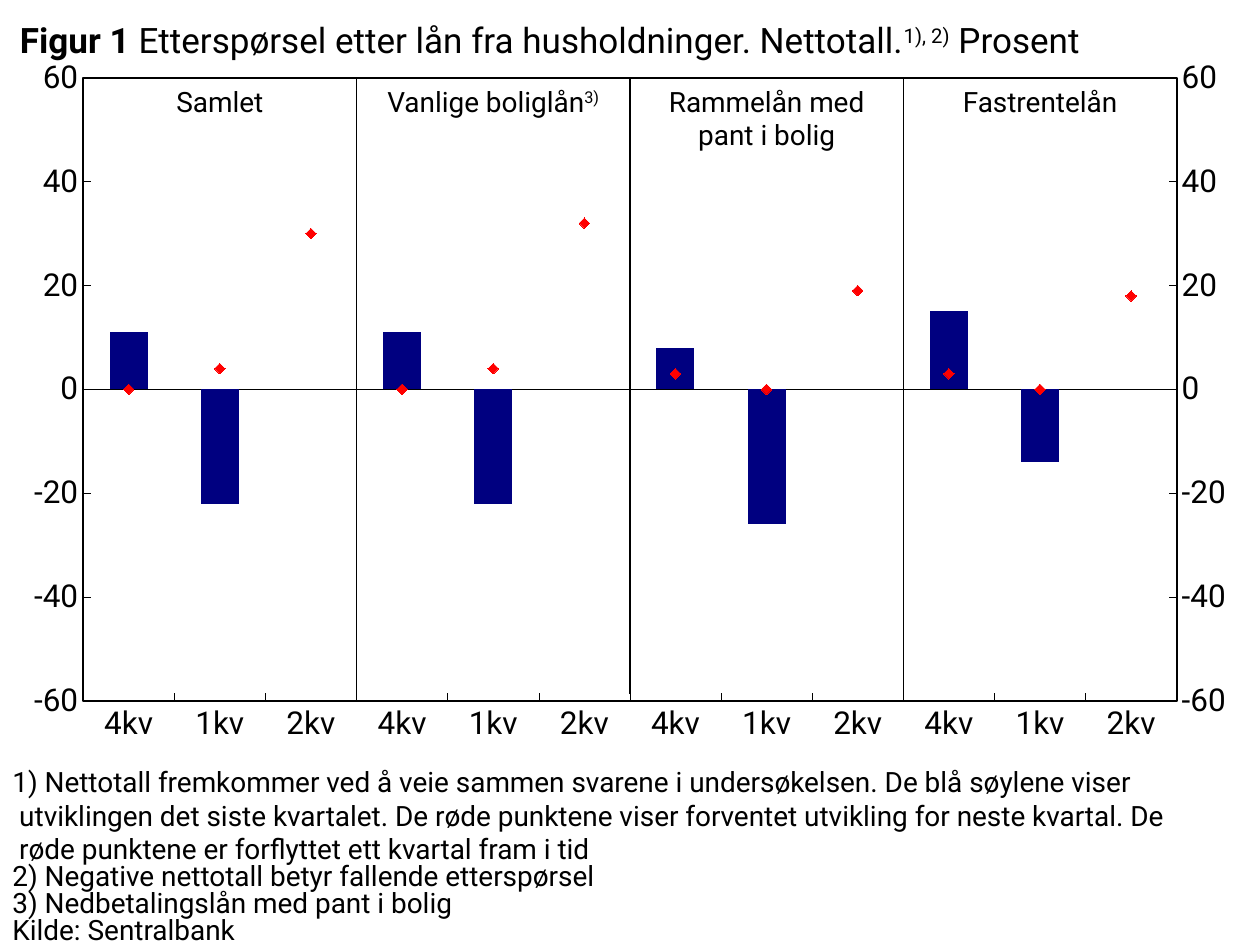
"""Build a slide on household loan demand: four-panel chart with footnotes."""
from copy import deepcopy
from itertools import product

from lxml import etree
from pptx import Presentation
from pptx.chart.data import CategoryChartData
from pptx.dml.color import RGBColor
from pptx.enum import chart as charts, shapes, text
from pptx.oxml import parse_xml
from pptx.oxml.ns import nsdecls, qn
from pptx.util import Inches, Pt

THEME = {
    "font": "Roboto",
    "ink": RGBColor(0x00, 0x00, 0x00),
    "bar": RGBColor(0x00, 0x00, 0x80),
    "point": RGBColor(0xFF, 0x00, 0x00),
    "title": Pt(20),
    "axis": Pt(18),
    "body": Pt(16),
}
PANELS = [
    ([("Samlet", {})], (11, -22, None), (0, 4, 30)),
    ([("Vanlige boliglån", {}), ("3)", {"baseline": "30000"})], (11, -22, None), (0, 4, 32)),
    ([("Rammelån med pant i bolig", {})], (8, -26, None), (3, 0, 19)),
    ([("Fastrentelån", {})], (15, -14, None), (3, 0, 18)),
]
TITLE = [
    ("Figur 1", {"b": "1"}),
    (" Etterspørsel etter lån fra husholdninger. Nettotall.", {}),
    ("1), 2)", {"baseline": "30000"}),
    (" Prosent", {}),
]
NOTES = [
    ("1) Nettotall fremkommer ved å veie sammen svarene i undersøkelsen. De blå søylene viser", 1),
    (" utviklingen det siste kvartalet. De røde punktene viser forventet utvikling for neste kvartal. De", 1),
    (" røde punktene er forflyttet ett kvartal fram i tid", 1),
    ("2) Negative nettotall betyr fallende etterspørsel", 0.8),
    ("3) Nedbetalingslån med pant i bolig", 0.8),
    ("Kilde: Sentralbank", 0.8),
]
QUARTERS = ["4kv", "1kv", "2kv"]

presentation = Presentation()
presentation.slide_width, presentation.slide_height = Inches(10), Inches(7.5)
slide = presentation.slides.add_slide(presentation.slide_layouts[6])

CHART_TOP, CHART_HEIGHT = 0.47, 5.71
PLOT = {"x": 0.066, "y": 0.026, "w": 0.868, "h": 0.866}
plot_left = PLOT["x"] * 10
plot_top = CHART_TOP + PLOT["y"] * CHART_HEIGHT
column = PLOT["w"] * 10 / len(PANELS)


def add_text(box, paragraphs, size, align=text.PP_ALIGN.LEFT, anchor=text.MSO_ANCHOR.TOP):
    """Add a wrapped text box and return its paragraphs."""
    frame = slide.shapes.add_textbox(*map(Inches, box)).text_frame
    frame.word_wrap, frame.vertical_anchor = True, anchor
    for index, runs in enumerate(paragraphs):
        paragraph = frame.add_paragraph() if index else frame.paragraphs[0]
        paragraph.alignment = align
        for words, attributes in runs:
            run = paragraph.add_run()
            run.text = words
            run.font.name, run.font.size = THEME["font"], size
            run.font.color.rgb = THEME["ink"]
            for name, value in attributes.items():
                run.font._element.set(name, value)
    return frame.paragraphs


data = CategoryChartData()
data.categories = QUARTERS * len(PANELS)
for group, (index, panel) in product((1, 2), enumerate(PANELS)):
    values = [None] * (len(QUARTERS) * len(PANELS))
    start = index * len(QUARTERS)
    values[start:start + len(QUARTERS)] = panel[group]
    data.add_series(f"Series {(group - 1) * len(PANELS) + index + 1}", values)
chart = slide.shapes.add_chart(
    charts.XL_CHART_TYPE.COLUMN_CLUSTERED, 0, Inches(CHART_TOP),
    presentation.slide_width, Inches(CHART_HEIGHT), data).chart
chart.has_legend = chart.has_title = False
chart.font.name, chart.font.size = THEME["font"], THEME["axis"]
chart.font.color.rgb = THEME["ink"]

axis_formats = {
    chart.category_axis: {
        "major_tick_mark": charts.XL_TICK_MARK.NONE,
        "tick_label_position": charts.XL_TICK_LABEL_POSITION.NONE},
    chart.value_axis: {
        "major_tick_mark": charts.XL_TICK_MARK.INSIDE,
        "tick_label_position": charts.XL_TICK_LABEL_POSITION.NEXT_TO_AXIS,
        "minimum_scale": -60, "maximum_scale": 60, "major_unit": 20},
}
for axis, settings in axis_formats.items():
    settings |= {"has_major_gridlines": False, "minor_tick_mark": charts.XL_TICK_MARK.NONE}
    for name, value in settings.items():
        setattr(axis, name, value)
    axis.format.line.color.rgb = THEME["ink"]
    axis.format.line.width = Pt(0.25)
    axis.tick_labels.font.name = THEME["font"]
    axis.tick_labels.font.size = THEME["axis"]
    axis.tick_labels.font.color.rgb = THEME["ink"]

plot_area = chart._chartSpace.find(".//" + qn("c:plotArea"))
bar_group = plot_area.find(qn("c:barChart"))
line_group = parse_xml(
    f'<c:lineChart {nsdecls("c")}><c:grouping val="standard"/><c:varyColors val="0"/>'
    '<c:marker val="1"/><c:axId val="5001"/><c:axId val="5002"/></c:lineChart>')
bar_group.addnext(line_group)
for series in bar_group.findall(qn("c:ser"))[len(PANELS):]:
    for flag in series.findall(qn("c:invertIfNegative")):
        series.remove(flag)
    line_group.find(qn("c:marker")).addprevious(series)

last_axis = plot_area.find(qn("c:valAx"))
right_axes = [
    ("c:valAx", {"axId": "5002", "crossAx": "5001", "crosses": "max", "axPos": "r"}),
    ("c:catAx", {"axId": "5001", "crossAx": "5002", "crosses": "min", "axPos": "b",
                 "majorTickMark": "in", "tickLblPos": "nextTo"}),
]
for tag, settings in right_axes:
    axis = deepcopy(plot_area.find(qn(tag)))
    for name, value in settings.items():
        axis.find(qn("c:" + name)).set("val", value)
    last_axis.addnext(axis)

for layout in plot_area.findall(qn("c:layout")):
    plot_area.remove(layout)
layout = etree.Element(qn("c:layout"))
manual = etree.SubElement(layout, qn("c:manualLayout"))
modes = {"layoutTarget": "inner", "xMode": "edge", "yMode": "edge"}
for name, value in (modes | PLOT).items():
    etree.SubElement(manual, qn("c:" + name)).set("val", str(value))
plot_area.insert(0, layout)
plot_area.append(parse_xml(
    f'<c:spPr {nsdecls("c", "a")}><a:noFill/><a:ln w="12700"><a:solidFill>'
    f'<a:srgbClr val="{THEME["ink"]}"/></a:solidFill></a:ln></c:spPr>'))

bars, points = chart.plots
bars.gap_width, bars.overlap, bars.vary_by_categories = 140, 100, False
for series in bars.series:
    series.invert_if_negative = False
    series.format.fill.solid()
    series.format.fill.fore_color.rgb = THEME["bar"]
for series in points.series:
    series.smooth = False
    series.format.line.fill.background()
    series.marker.style, series.marker.size = charts.XL_MARKER_STYLE.DIAMOND, 6
    series.marker.format.fill.solid()
    series.marker.format.fill.fore_color.rgb = THEME["point"]
    series.marker.format.line.color.rgb = THEME["point"]

for index, (heading, _, _) in enumerate(PANELS):
    left = plot_left + index * column
    add_text((left, plot_top, column, 0.37), [heading], THEME["body"], text.PP_ALIGN.CENTER)
    if index:
        divider = slide.shapes.add_connector(
            shapes.MSO_CONNECTOR.STRAIGHT, Inches(left), Inches(5.51), Inches(left), Inches(plot_top))
        divider.line.color.rgb, divider.line.width = THEME["ink"], Pt(0.75)
        etree.SubElement(divider._element.spPr, qn("a:effectLst"))

add_text((0.06, 0.06, 8.91, 0.47), [TITLE], THEME["title"], anchor=text.MSO_ANCHOR.BOTTOM)
note_paragraphs = add_text((0, 6.02, 10, 1.48), [[(note, {})] for note, _ in NOTES], THEME["body"])
for paragraph, (_, spacing) in zip(note_paragraphs, NOTES):
    paragraph.line_spacing = float(spacing)
    properties = paragraph._p.get_or_add_pPr()
    properties.set("marL", str(Inches(0.5)))
    properties.set("indent", str(-Inches(0.5)))

presentation.save("out.pptx")
